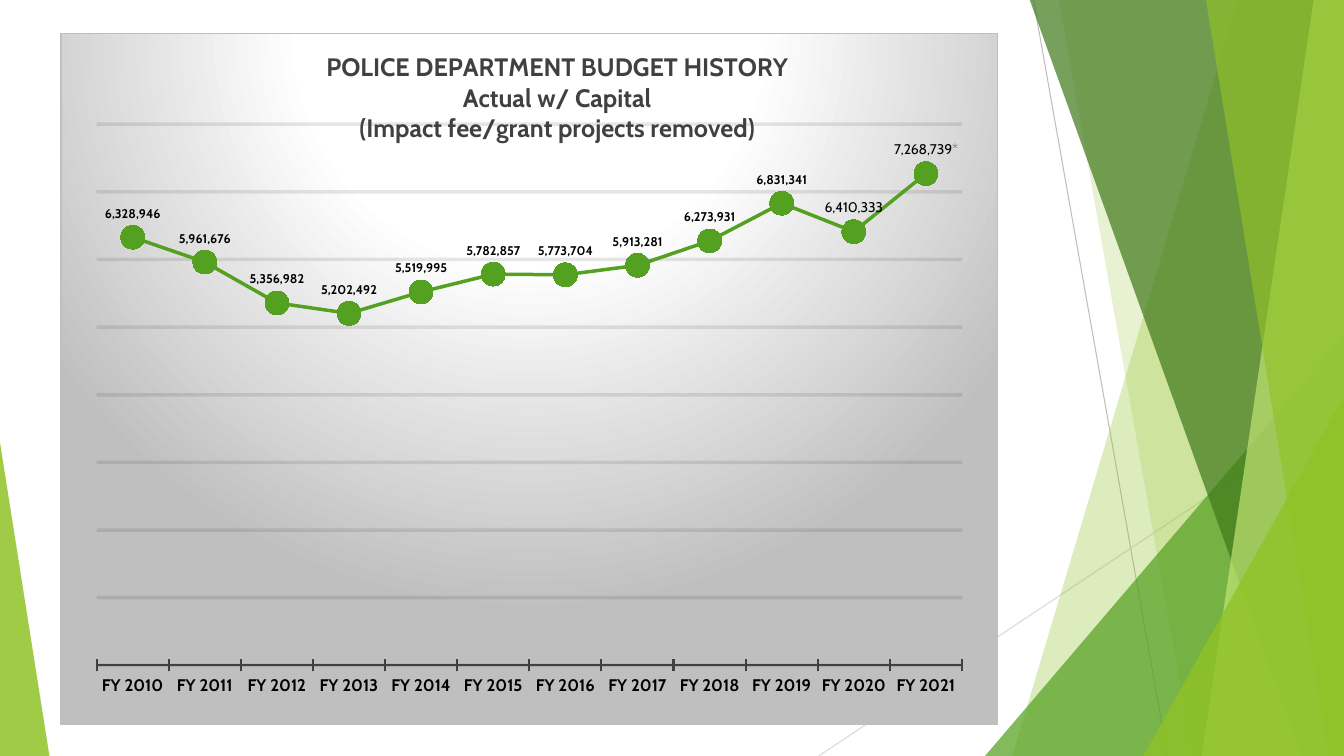
from pptx import Presentation
from pptx import util as u
from pptx.chart.data import CategoryChartData
from pptx.dml.color import RGBColor
from pptx.enum import chart as ch, shapes
from pptx.oxml import parse_xml
from pptx.oxml.ns import nsdecls, qn

TOP, RIGHT, BOTTOM = -0.01, 13.33, 7.5
LIME, GREEN, DARK_GREEN, PALE_LIME = "90C226", "54A021", "3F7819", "C0E474"
BUDGETS = [6328946, 5961676, 5356982, 5202492, 5519995, 5782857,
           5773704, 5913281, 6273931, 6831341, 6410333, 7268739]
HEADING = ("POLICE DEPARTMENT BUDGET HISTORY\nActual w/ Capital\n"
           "(Impact fee/grant projects removed)")
PANEL = f"""<c:spPr {nsdecls("c", "a")}>
<a:gradFill><a:gsLst>
<a:gs pos="0"><a:srgbClr val="FFFFFF"/></a:gs>
<a:gs pos="39000"><a:srgbClr val="FFFFFF"/></a:gs>
<a:gs pos="100000"><a:srgbClr val="BFBFBF"/></a:gs>
</a:gsLst><a:path path="circle">
<a:fillToRect l="50000" t="-80000" r="50000" b="180000"/></a:path></a:gradFill>
<a:ln w="9525"><a:solidFill><a:srgbClr val="BFBFBF"/></a:solidFill></a:ln>
</c:spPr>"""


def rgb(value):
    return RGBColor.from_string(value)


def fade(element, percent):
    color = element.find(".//" + qn("a:srgbClr"))
    color.append(parse_xml(f'<a:alpha {nsdecls("a")} val="{percent * 1000}"/>'))


def place(parent, **layout):
    parts = "".join(f'<c:{key} val="{value}"/>' for key, value in layout.items())
    manual = parse_xml(f'<c:layout {nsdecls("c")}><c:manualLayout>{parts}'
                       "</c:manualLayout></c:layout>")
    current = parent.find(qn("c:layout"))
    if current is None:
        parent.insert(0, manual)
    else:
        parent.replace(current, manual)


class Deck:
    font = "Cabin"

    def __init__(self):
        self.prs = Presentation()
        self.prs.slide_width = u.Inches(RIGHT)
        self.prs.slide_height = u.Inches(BOTTOM)
        self.slide = self.prs.slides.add_slide(self.prs.slide_layouts[6])

    def style_font(self, font, size, color="000000", bold=False):
        font.name, font.size, font.bold = self.font, u.Pt(size), bold
        font.color.rgb = rgb(color)

    def stroke(self, line, color, width):
        line.color.rgb = rgb(color)
        line.width = u.Pt(width)

    def line(self, start, end, color):
        ray = self.slide.shapes.add_connector(
            shapes.MSO_CONNECTOR.STRAIGHT, *map(u.Inches, start + end))
        self.stroke(ray.line, color, 0.75)
        ray._element.spPr.append(parse_xml(f'<a:effectLst {nsdecls("a")}/>'))

    def paint(self, facet, color, opacity):
        facet.shadow.inherit = False
        facet.fill.solid()
        facet.fill.fore_color.rgb = rgb(color)
        facet.line.fill.background()
        fade(facet._element.spPr, opacity)

    def band(self, top_x, bottom_x, color, opacity):
        corners = [(top_x, TOP), (RIGHT, TOP), (RIGHT, BOTTOM), (bottom_x, BOTTOM)]
        start, *rest = [(u.Inches(x), u.Inches(y)) for x, y in corners]
        outline = self.slide.shapes.build_freeform(*start)
        outline.add_line_segments(rest)
        self.paint(outline.convert_to_shape(), color, opacity)

    def triangle(self, left, top, width, apex, color, opacity):
        wedge = self.slide.shapes.add_shape(
            shapes.MSO_SHAPE.ISOSCELES_TRIANGLE,
            *map(u.Inches, (left, top, width, BOTTOM - top)))
        wedge.adjustments[0] = apex
        self.paint(wedge, color, opacity)

    def line_chart(self, box, categories, values, heading):
        data = CategoryChartData(number_format="#,##0")
        data.categories = categories
        data.add_series("Series 1", values)
        chart = self.slide.shapes.add_chart(
            ch.XL_CHART_TYPE.LINE_MARKERS, *map(u.Inches, box), data).chart
        self.style_font(chart.font, 10)
        chart.has_legend = False
        chart.element.find(qn("c:chart")).addnext(parse_xml(PANEL))
        place(chart.element.find(".//" + qn("c:plotArea")), layoutTarget="inner",
              xMode="edge", yMode="edge", x=0.038, y=0.131, w=0.924, h=0.784)
        self.chart_title(chart, heading)
        self.axes(chart)
        self.budget_line(chart.plots[0].series[0])
        return chart

    def chart_title(self, chart, heading):
        chart.has_title = True
        frame = chart.chart_title.text_frame
        frame.text = heading
        for paragraph in frame.paragraphs:
            for run in paragraph.runs:
                self.style_font(run.font, 18, "404040", True)
        place(chart.element.find(".//" + qn("c:title")),
              xMode="edge", yMode="edge", x=0.28, y=0.02)

    def axes(self, chart):
        years, dollars = chart.category_axis, chart.value_axis
        years.major_tick_mark = ch.XL_TICK_MARK.CROSS
        self.style_font(years.tick_labels.font, 12, bold=True)
        self.stroke(years.format.line, "404040", 1.5)
        dollars.minimum_scale, dollars.maximum_scale = 0, 8000000
        dollars.major_unit = 1000000
        dollars.visible = False
        self.stroke(dollars.major_gridlines.format.line, "0D0D0D", 2.5)
        fade(chart.element.find(".//" + qn("c:majorGridlines")), 10)

    def budget_line(self, series):
        series.smooth = False
        self.stroke(series.format.line, GREEN, 2.5)
        marker = series.marker
        marker.style, marker.size = ch.XL_MARKER_STYLE.CIRCLE, 17
        marker.format.fill.solid()
        marker.format.fill.fore_color.rgb = rgb(GREEN)
        self.stroke(marker.format.line, GREEN, 0.75)
        labels = series.data_labels
        labels.show_value = True
        labels.position = ch.XL_LABEL_POSITION.ABOVE
        labels.number_format, labels.number_format_is_linked = "#,##0", False
        self.style_font(labels.font, 9, bold=True)

    def point_label(self, chart, index, *pieces):
        label = chart.plots[0].series[0].points[index].data_label
        paragraph = label.text_frame.paragraphs[0]
        for wording, color in pieces:
            run = paragraph.add_run()
            run.text = wording
            self.style_font(run.font, 10, color)
        label.position = ch.XL_LABEL_POSITION.ABOVE


def main():
    deck = Deck()
    deck.line((10.25, 0), (11.58, BOTTOM), "BFBFBF")
    deck.line((RIGHT, 4.03), (8.12, BOTTOM), "D9D9D9")
    deck.band(12.28, 10.04, LIME, 30)
    deck.band(10.5, 11.83, LIME, 20)
    deck.triangle(9.77, 3.33, 3.56, 1, GREEN, 72)
    deck.band(10.21, 12.91, DARK_GREEN, 70)
    deck.band(13.03, 11.92, PALE_LIME, 70)
    deck.band(11.96, 13.18, LIME, 65)
    deck.triangle(11.34, 3.93, 1.99, 1, LIME, 80)
    deck.triangle(0, 4.39, 0.49, 0, LIME, 85)
    years = [f"FY {year}" for year in range(2010, 2010 + len(BUDGETS))]
    history = deck.line_chart((0.6, 0.33, 9.3, 6.86), years, BUDGETS, HEADING)
    deck.point_label(history, 10, ("6,410,333", "000000"))
    deck.point_label(history, 11, ("7,268,739", "000000"), ("*", "595959"))
    deck.prs.save("out.pptx")


if __name__ == "__main__":
    main()
